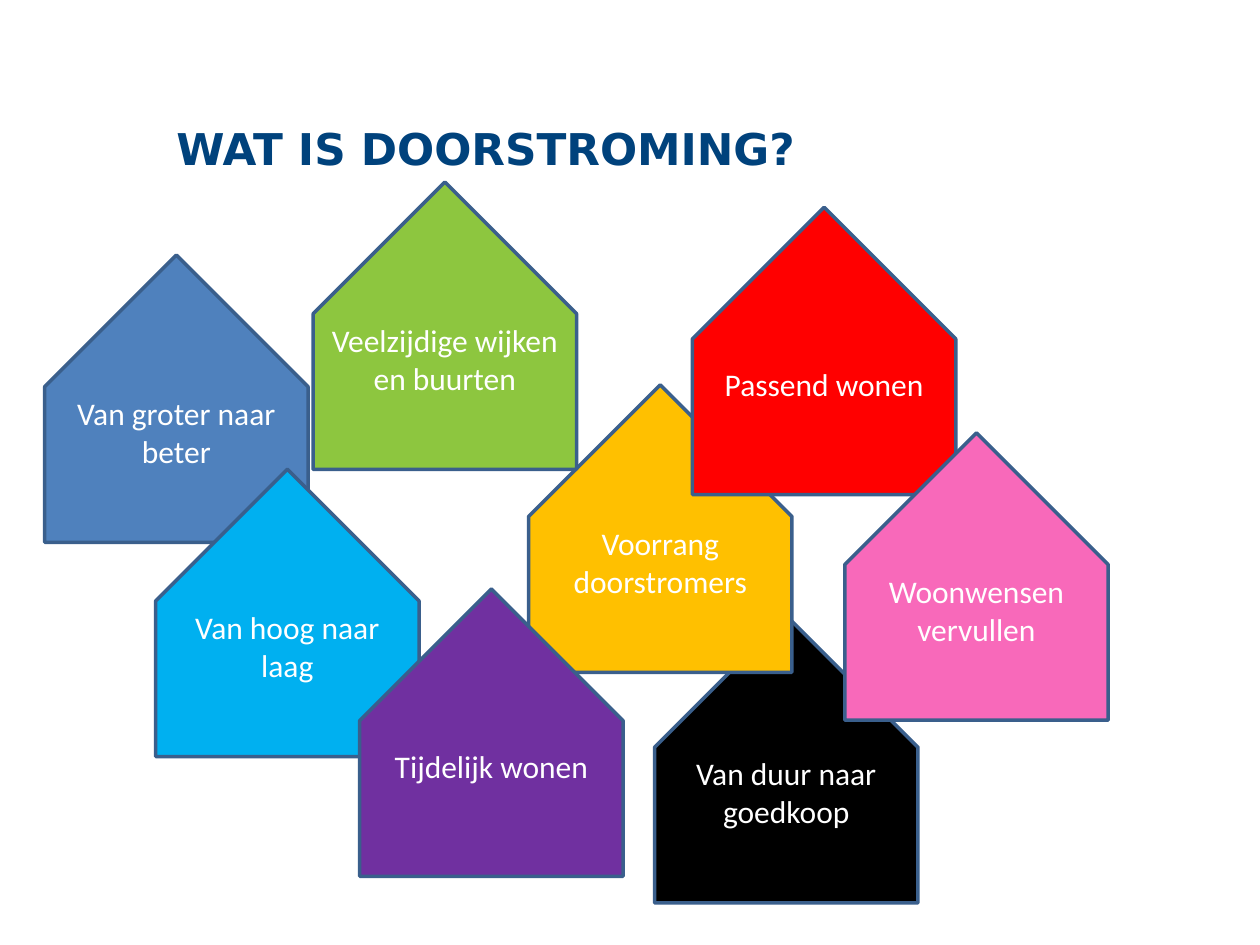
"""Build a slide of coloured houses that explains housing mobility."""
from pptx import Presentation
from pptx.dml.color import RGBColor
from pptx.enum.shapes import MSO_SHAPE
from pptx.enum.text import MSO_ANCHOR, PP_ALIGN
from pptx.util import Pt

TITLE = "WAT IS DOORSTROMING?"
HOUSES = [
    ("Van groter naar beter", "4F81BD", 18.7, 152.6),
    ("Van duur naar goedkoop", "000000", 367.2, 358.6),
    ("Van hoog naar laag", "00B0F0", 82.1, 275),
    ("Voorrang doorstromers", "FFC000", 295.2, 226.8),
    ("Passend wonen", "FF0000", 388.8, 125.3),
    ("Veelzijdige wijken en buurten", "8DC63F", 172.1, 110.9),
    ("Tijdelijk wonen", "7030A0", 198.7, 343.4),
    ("Woonwensen vervullen", "F869BA", 475.9, 254.2),
]
HOUSE_HEIGHT, HOUSE_WIDTH = 164.2, 150.5
OUTLINE = "3A5F8C"


def color(value):
    return RGBColor.from_string(value)


def set_font(paragraph, name, size, value, bold=False):
    font = paragraph.font
    font.name, font.size, font.bold = name, Pt(size), bold
    font.color.rgb = color(value)


def add_title(page):
    title = page.shapes.title
    title.left, title.top, title.width, title.height = Pt(93.6), Pt(72), Pt(561.6), Pt(25.2)
    frame = title.text_frame
    frame.text = TITLE
    frame.margin_top = frame.margin_bottom = 0
    frame.vertical_anchor = MSO_ANCHOR.MIDDLE
    paragraph = frame.paragraphs[0]
    paragraph.alignment = PP_ALIGN.LEFT
    paragraph.line_spacing = Pt(30)
    set_font(paragraph, "DejaVu Sans", 25, "00427C", bold=True)


def add_house(page, label, fill, left, top):
    house = page.shapes.add_shape(
        MSO_SHAPE.PENTAGON, Pt(left), Pt(top), Pt(HOUSE_HEIGHT), Pt(HOUSE_WIDTH))
    house.rotation = 270
    house.shadow.inherit = False
    house.fill.solid()
    house.fill.fore_color.rgb = color(fill)
    house.line.color.rgb = color(OUTLINE)
    house.line.width = Pt(2)
    frame = house.text_frame
    frame.text = label
    frame.word_wrap = True
    frame.vertical_anchor = MSO_ANCHOR.MIDDLE
    house.element.txBody.bodyPr.set("vert", "vert")
    paragraph = frame.paragraphs[0]
    paragraph.alignment = PP_ALIGN.CENTER
    set_font(paragraph, "Calibri", 18, "FFFFFF")


def main():
    deck = Presentation()
    deck.slide_width, deck.slide_height = Pt(720), Pt(540)
    page = deck.slides.add_slide(deck.slide_layouts[5])
    add_title(page)
    for house in HOUSES:
        add_house(page, *house)
    deck.save("out.pptx")


if __name__ == "__main__":
    main()
